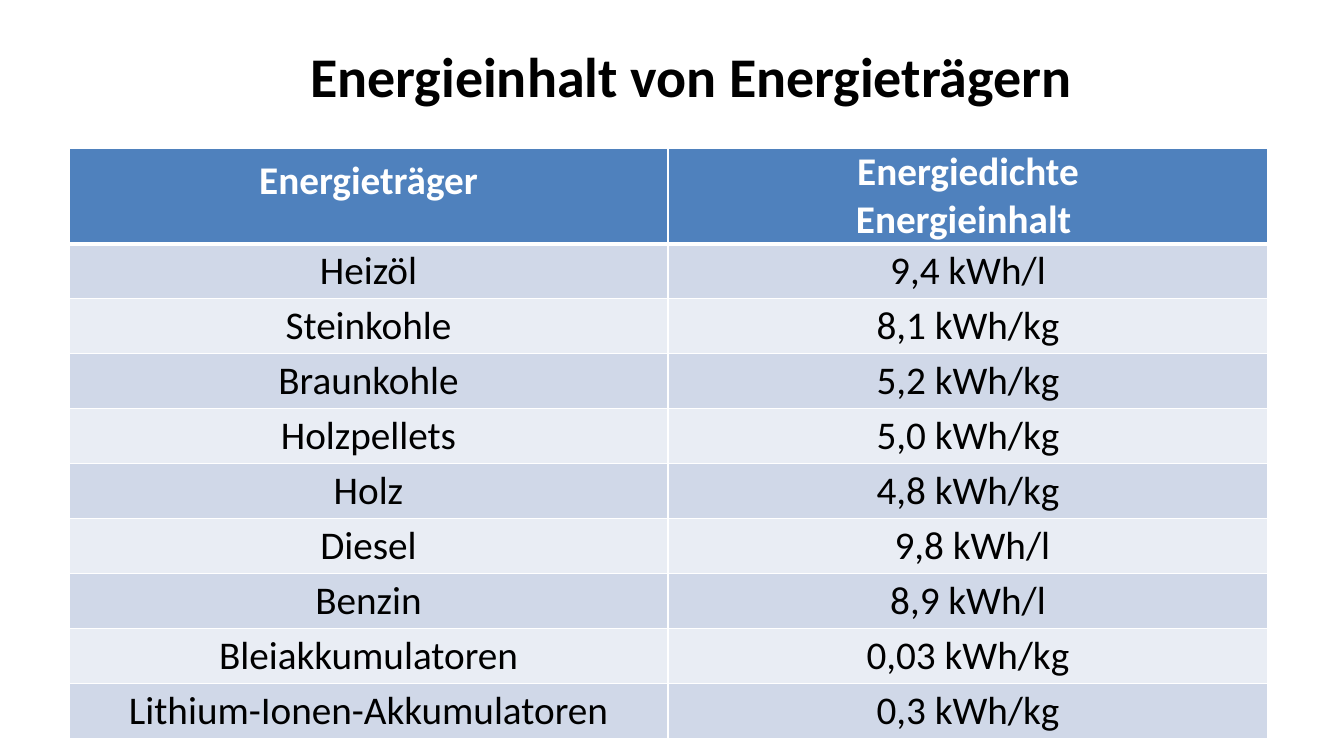
from lxml.etree import SubElement
from pptx import Presentation
from pptx.dml.color import RGBColor
from pptx.enum.text import MSO_ANCHOR, PP_ALIGN
from pptx.oxml.ns import qn
from pptx.util import Emu, Pt

COLORS = {
    "header": "4F81BD",
    "dark_band": "D0D8E8",
    "light_band": "E9EDF4",
    "white": "FFFFFF",
    "black": "000000",
}
ROWS = [
    ("Energieträger", "Energiedichte\nEnergieinhalt "),
    ("Heizöl", "9,4 kWh/l"),
    ("Steinkohle", "8,1 kWh/kg"),
    ("Braunkohle", "5,2 kWh/kg"),
    ("Holzpellets", "5,0 kWh/kg"),
    ("Holz", "4,8 kWh/kg"),
    ("Diesel", " 9,8 kWh/l"),
    ("Benzin", "8,9 kWh/l"),
    ("Bleiakkumulatoren", "0,03 kWh/kg"),
    ("Lithium-Ionen-Akkumulatoren", "0,3 kWh/kg"),
]
HEADER_HEIGHT, ROW_HEIGHT = 95, 55
COLUMN_WIDTHS = (599, 600)


def px(length):
    return Emu(round(length * 914400 / 100.8))


def format_text(paragraph, size, color, bold):
    paragraph.alignment = PP_ALIGN.CENTER
    for run in paragraph.runs:
        run.font.name = "Calibri"
        run.font.size = Pt(size)
        run.font.bold = bold
        run.font.color.rgb = RGBColor.from_string(COLORS[color])


presentation = Presentation()
presentation.slide_width = px(1344)
presentation.slide_height = px(756)
slide = presentation.slides.add_slide(presentation.slide_layouts[5])

title = slide.shapes.title
title.left, title.top, title.width, title.height = px(278), px(36), px(826), px(78)
title.text_frame.text = "Energieinhalt von Energieträgern"
title.text_frame.vertical_anchor = MSO_ANCHOR.TOP
format_text(title.text_frame.paragraphs[0], 40, "black", True)

table_height = HEADER_HEIGHT + ROW_HEIGHT * (len(ROWS) - 1)
table = slide.shapes.add_table(
    len(ROWS), len(COLUMN_WIDTHS), px(69), px(148), px(sum(COLUMN_WIDTHS)), px(table_height)
).table
table.horz_banding = False
for column, width in zip(table.columns, COLUMN_WIDTHS):
    column.width = px(width)

for row_index, texts in enumerate(ROWS):
    is_header = row_index == 0
    band = "header" if is_header else "dark_band" if row_index % 2 else "light_band"
    table.rows[row_index].height = px(HEADER_HEIGHT if is_header else ROW_HEIGHT)
    for column_index, text in enumerate(texts):
        cell = table.cell(row_index, column_index)
        cell.vertical_anchor = MSO_ANCHOR.MIDDLE
        cell.margin_left = cell.margin_right = px(7)
        cell.margin_top = cell.margin_bottom = 0
        paragraph = cell.text_frame.paragraphs[0]
        paragraph.text = text
        paragraph.space_after = Pt(6)
        format_text(paragraph, 28, "white" if is_header else "black", is_header)

        properties = cell._tc.get_or_add_tcPr()
        for side in ("lnL", "lnR", "lnT", "lnB"):
            thick = (row_index, side) in ((0, "lnB"), (1, "lnT"))
            border = SubElement(properties, qn(f"a:{side}"), w=str(Pt(3 if thick else 1)))
            border_fill = SubElement(border, qn("a:solidFill"))
            SubElement(border_fill, qn("a:srgbClr"), val=COLORS["white"])
        cell.fill.solid()
        cell.fill.fore_color.rgb = RGBColor.from_string(COLORS[band])

table.cell(0, 0).text_frame.paragraphs[0].line_spacing = Pt(13)

presentation.save("out.pptx")
